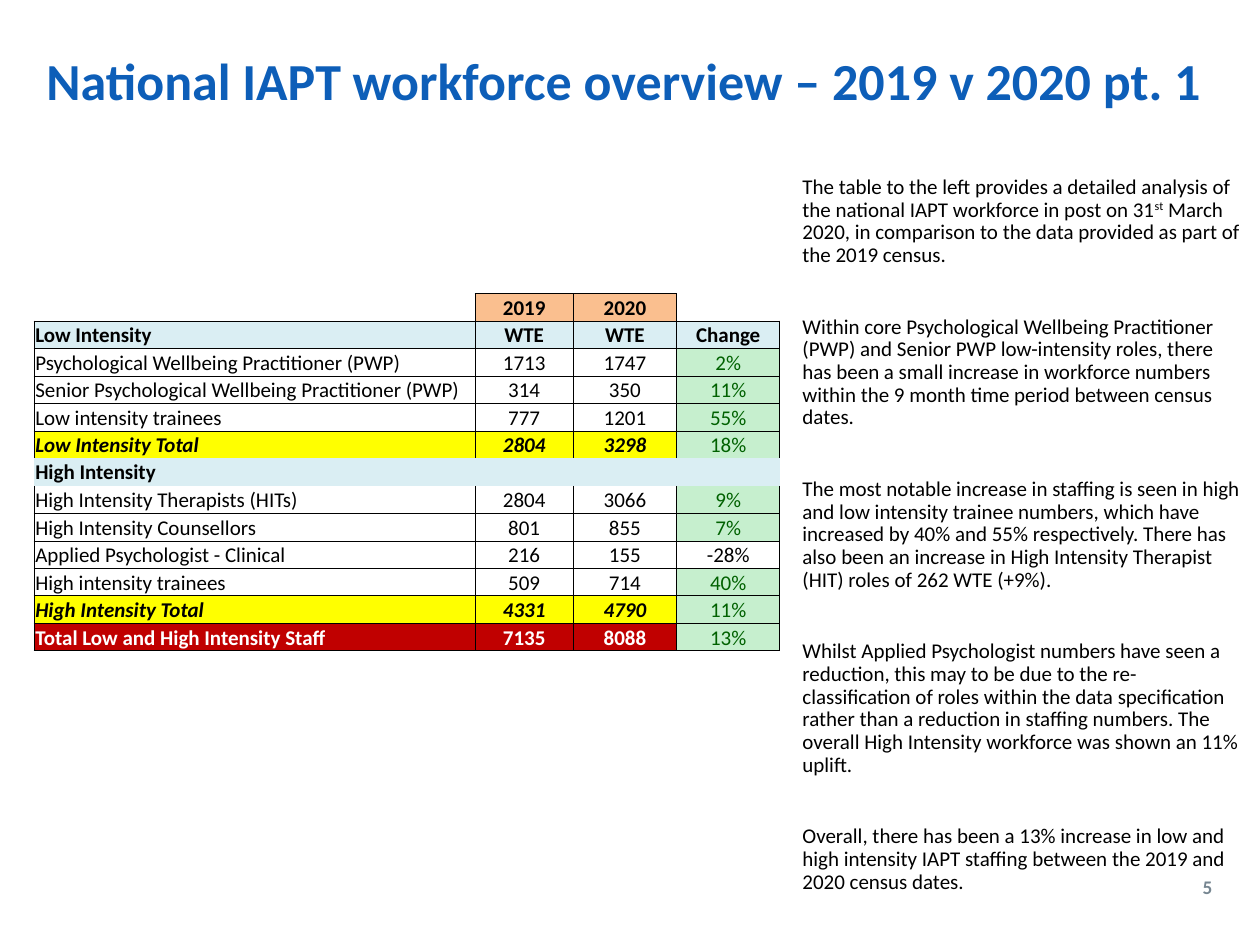
from dataclasses import dataclass

from lxml.etree import SubElement
from pptx import Presentation
from pptx.dml.color import RGBColor
from pptx.enum.text import MSO_ANCHOR as ANCHOR, PP_ALIGN as ALIGN
from pptx.oxml.ns import qn
from pptx.util import Inches, Pt


@dataclass(frozen=True)
class Theme:
    font: str = "Calibri"
    title: str = "0D5EB8"
    number: str = "768691"
    black: str = "000000"
    white: str = "FFFFFF"
    year: str = "FABF8F"
    band: str = "DAEEF3"
    total: str = "FFFF00"
    grand: str = "C00000"
    growth: str = "C6EFCE"
    growth_text: str = "006100"
    title_size: float = 29.7
    body_size: float = 12
    number_size: float = 11


THEME = Theme()
TABLE_BOX = (0.27, 2.33, 5.92, 2.84)
COL_WIDTHS = (3.5, 0.78, 0.82, 0.82)
ALL_SIDES = "LRTB"

# Row kind, then the cell texts
ROWS = [
    ("years", "", "2019", "2020", ""),
    ("heading", "Low Intensity", "WTE", "WTE", "Change"),
    ("role", "Psychological Wellbeing Practitioner (PWP)", "1713", "1747", "2%"),
    ("role", "Senior Psychological Wellbeing Practitioner (PWP)", "314", "350", "11%"),
    ("role", "Low intensity trainees", "777", "1201", "55%"),
    ("total", "Low Intensity Total", "2804", "3298", "18%"),
    ("section", "High Intensity", "", "", ""),
    ("role", "High Intensity Therapists (HITs)", "2804", "3066", "9%"),
    ("role", "High Intensity Counsellors", "801", "855", "7%"),
    ("role", "Applied Psychologist - Clinical", "216", "155", "-28%"),
    ("role", "High intensity trainees", "509", "714", "40%"),
    ("total", "High Intensity Total", "4331", "4790", "11%"),
    ("grand", "Total Low and High Intensity Staff", "7135", "8088", "13%"),
]

# Fill and font of each row kind
ROW_STYLES = {
    "years": (THEME.year, {"bold": True}),
    "heading": (THEME.band, {"bold": True}),
    "section": (THEME.band, {"bold": True}),
    "role": (None, {}),
    "total": (THEME.total, {"bold": True, "italic": True}),
    "grand": (THEME.grand, {"bold": True, "color": THEME.white}),
}

# Each paragraph is a list of (text, is superscript)
COMMENTARY = [
    [("The table to the left provides a detailed analysis of the national IAPT "
      "workforce in post on 31", False), ("st", True),
     (" March 2020, in comparison to the data provided as part of the 2019 census.", False)],
    [("Within core Psychological Wellbeing Practitioner (PWP) and Senior PWP "
      "low-intensity roles, there has been a small increase in workforce numbers "
      "within the 9 month time period between census dates.", False)],
    [("The most notable increase in staffing is seen in high and low intensity "
      "trainee numbers, which have increased by 40% and 55% respectively. There has "
      "also been an increase in High Intensity Therapist (HIT) roles of 262 WTE (+9%).", False)],
    [("Whilst Applied Psychologist numbers have seen a reduction, this may to be due "
      "to the re-classification of roles within the data specification rather than a "
      "reduction in staffing numbers. The overall High Intensity workforce was shown "
      "an 11% uplift.", False)],
    [("Overall, there has been a 13% increase in low and high intensity IAPT staffing "
      "between the 2019 and 2020 census dates.", False)],
]


class SlideBuilder:
    def __init__(self, slide, theme):
        self.s = slide
        self.theme = theme

    def run(self, p, text, superscript=False, color=None, **fmt):
        r = p.add_run()
        r.text = text
        settings = {"name": self.theme.font, "size": Pt(self.theme.body_size),
                    "bold": False, **fmt}
        for name, value in settings.items():
            setattr(r.font, name, value)
        r.font.color.rgb = RGBColor.from_string(color or self.theme.black)
        if superscript:
            r._r.get_or_add_rPr().set("baseline", "30000")

    def text(self, box, paragraphs, anchor=ANCHOR.TOP, para=None, gap=0, **fmt):
        """Add a text box; gap is the space in points between paragraphs."""
        tf = self.s.shapes.add_textbox(*map(Inches, box)).text_frame
        tf.word_wrap = True
        tf.vertical_anchor = anchor
        for i, runs in enumerate(paragraphs):
            p = tf.add_paragraph() if i else tf.paragraphs[0]
            settings = {**(para or {}), "space_before": Pt(gap if i else 0)}
            for name, value in settings.items():
                setattr(p, name, value)
            for text, superscript in runs:
                self.run(p, text, superscript, **fmt)

    def borders(self, cell, sides):
        """Draw the named sides and clear the others."""
        tc_pr = cell._tc.get_or_add_tcPr()
        for side in ALL_SIDES:
            ln = SubElement(tc_pr, qn(f"a:ln{side}"), w=str(Pt(0.5)))
            if side in sides:
                fill = SubElement(ln, qn("a:solidFill"))
                SubElement(fill, qn("a:srgbClr"), val=self.theme.black)
            else:
                SubElement(ln, qn("a:noFill"))

    def cell(self, cell, text, fill, sides, align, anchor, **fmt):
        self.borders(cell, sides)
        if fill:
            cell.fill.solid()
            cell.fill.fore_color.rgb = RGBColor.from_string(fill)
        else:
            cell.fill.background()
        margin = Inches(0.01)
        settings = {"margin_left": margin, "margin_right": margin, "margin_top": margin,
                    "margin_bottom": 0, "vertical_anchor": anchor}
        for name, value in settings.items():
            setattr(cell, name, value)
        p = cell.text_frame.paragraphs[0]
        p.alignment = align
        if text:
            self.run(p, text, **fmt)
        else:
            SubElement(p._p, qn("a:endParaRPr"), sz=str(round(self.theme.body_size * 100)))

    def table(self, box, col_widths, rows):
        table = self.s.shapes.add_table(len(rows), len(col_widths), *map(Inches, box)).table
        table.first_row = table.horz_banding = False
        for col, width in zip(table.columns, col_widths):
            col.width = Inches(width)
        kinds = [row[0] for row in rows]
        for i, (kind, *texts) in enumerate(rows):
            table.rows[i].height = Inches(box[3] / len(rows))
            row_fill, row_font = ROW_STYLES[kind]
            anchor = ANCHOR.BOTTOM if kind in ("role", "total", "grand") else ANCHOR.MIDDLE
            sides = "" if kind == "section" else ALL_SIDES
            if "section" in kinds[i + 1:i + 2]:
                sides = sides.replace("B", "")
            if "section" in kinds[max(i - 1, 0):i]:
                sides = sides.replace("T", "")
            for j, text in enumerate(texts):
                fill, font, cell_sides = row_fill, row_font, sides
                if kind == "years" and not text:
                    fill, cell_sides = None, "LB" if j else "RB"
                elif text.endswith("%") and not text.startswith("-"):
                    fill, font = self.theme.growth, {"color": self.theme.growth_text}
                align = ALIGN.CENTER if j else ALIGN.LEFT
                self.cell(table.cell(i, j), text, fill, cell_sides, align, anchor, **font)
            if kind == "section":
                table.cell(i, 0).merge(table.cell(i, len(texts) - 1))


def main():
    prs = Presentation()
    prs.slide_width, prs.slide_height = Inches(10), Inches(7.5)
    builder = SlideBuilder(prs.slides.add_slide(prs.slide_layouts[6]), THEME)
    builder.text((7.95, 6.84, 1.77, 0.4), [[("5", False)]], ANCHOR.MIDDLE,
                 {"alignment": ALIGN.RIGHT}, size=Pt(THEME.number_size),
                 color=THEME.number, bold=True)
    builder.text((0.27, 0.18, 9.45, 0.97),
                 [[("National IAPT workforce overview – 2019 v 2020 pt. 1", False)]],
                 ANCHOR.MIDDLE, {"line_spacing": 0.9}, size=Pt(THEME.title_size),
                 color=THEME.title, bold=True)
    builder.table(TABLE_BOX, COL_WIDTHS, ROWS)
    builder.text((6.27, 1.35, 3.69, 4.85), COMMENTARY, para={"line_spacing": 0.9}, gap=28)
    prs.save("out.pptx")


if __name__ == "__main__":
    main()
